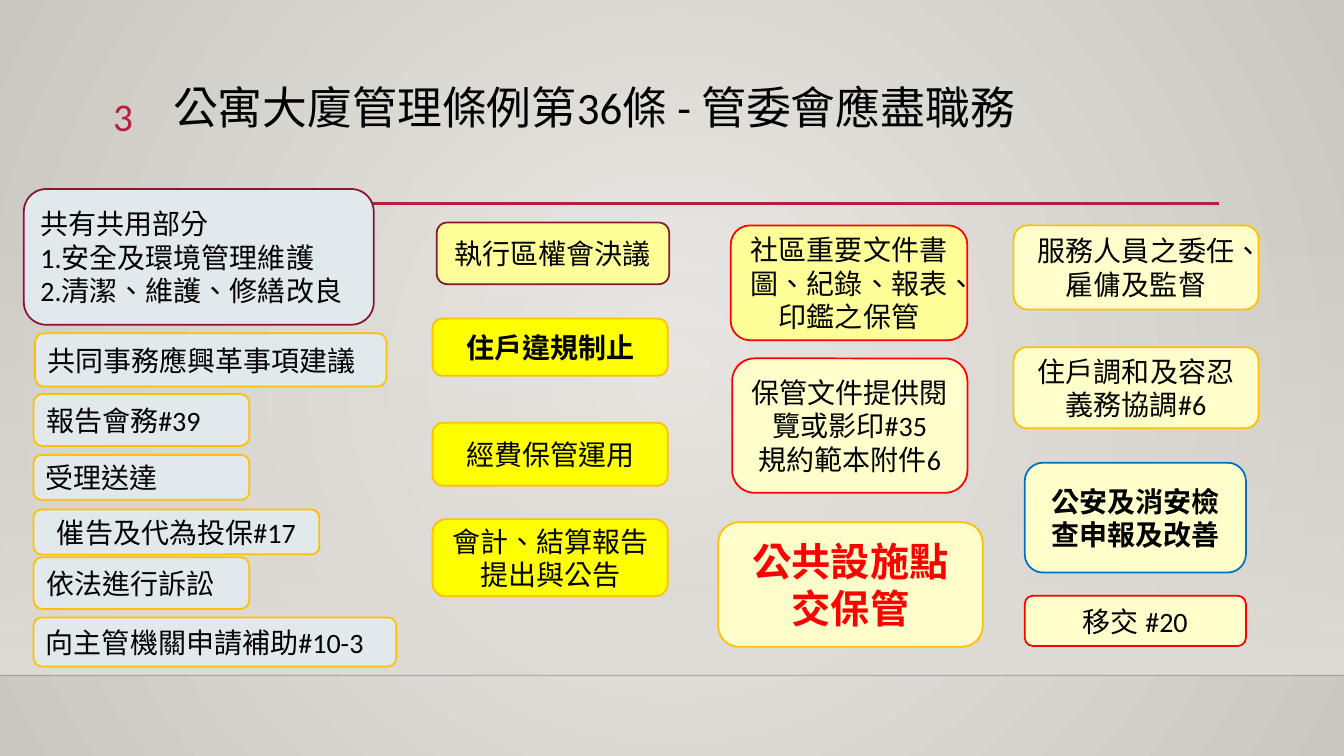
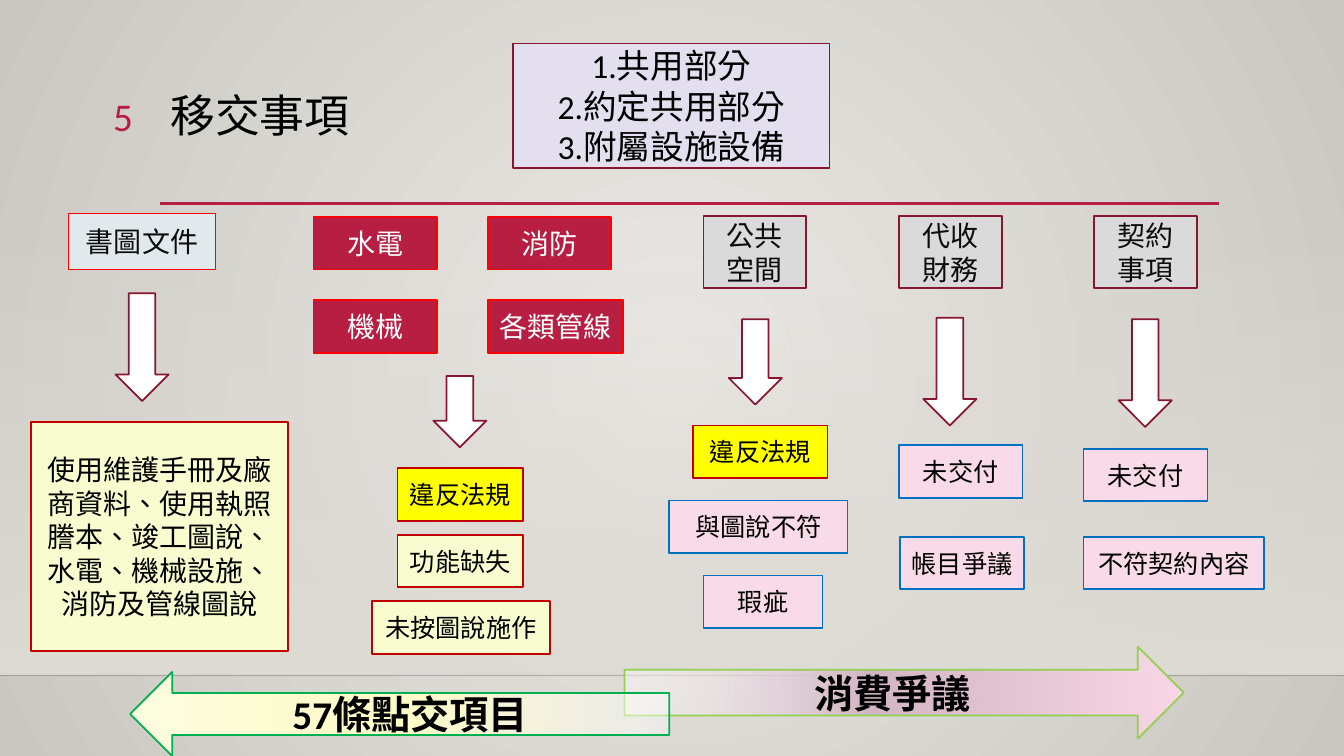
from lxml import etree
from pptx import Presentation
from pptx.dml.color import RGBColor
from pptx.enum import shapes, text
from pptx.oxml import ns
from pptx.util import Pt

FONT = "Calibri"
W, H = 960, 540
COLORS = {
    "black": "000000", "ink": "0D0D0D", "white": "FFFFFF", "crimson": "B71E42",
    "wine": "871631", "red": "FF0000", "brick": "C00000", "blue": "0070C0",
    "gold": "FFC000", "lime": "92D050", "green": "00B050", "yellow": "FFFF00",
    "lemon": "FFFF99", "cream": "FFFFCC", "ivory": "F9FCCE", "mist": "E1E9EC",
    "lilac": "E4DFEF", "gray": "DADADA", "pink": "F8DAE8", "sand": "DFDBD5",
    "glow": "ECEAE7", "edge": "CAC7C1", "rule": "000001", "mauve": "D3B6C4",
    "rose": "FBD8E8", "butter": "FFFDC5", "milk": "FFFEE3",
}
LEFT, CENTER, RIGHT = text.PP_ALIGN.LEFT, text.PP_ALIGN.CENTER, text.PP_ALIGN.RIGHT
ROUND, RECT = shapes.MSO_SHAPE.ROUNDED_RECTANGLE, shapes.MSO_SHAPE.RECTANGLE
DOWN = shapes.MSO_SHAPE.DOWN_ARROW


def rgb(name):
    return RGBColor.from_string(COLORS[name])


def add_xml(parent, tag, **attrs):
    return etree.SubElement(parent, ns.qn(tag), attrs)


class Deck:
    def __init__(self):
        self.prs = Presentation()
        self.prs.slide_width, self.prs.slide_height = Pt(W), Pt(H)
        self.s = None
        master = self.prs.slide_master
        self.gradient(master.background.fill, master.element,
                      [(0, "glow", 100), (100, "edge", 100)])

    def gradient(self, fill, element, stops, angle=None):
        """Stops are (position, colour, opacity) in percent; no angle means radial."""
        fill.gradient()
        grad = element.find(".//" + ns.qn("a:gradFill"))
        for child in list(grad):
            grad.remove(child)
        gs_list = add_xml(grad, "a:gsLst")
        for pos, color, alpha in stops:
            gs = add_xml(gs_list, "a:gs", pos=str(pos * 1000))
            clr = add_xml(gs, "a:srgbClr", val=COLORS[color])
            add_xml(clr, "a:alpha", val=str(alpha * 1000))
        if angle is None:
            circle = add_xml(grad, "a:path", path="circle")
            add_xml(circle, "a:fillToRect", l="50000", t="50000", r="50000", b="50000")
        else:
            add_xml(grad, "a:lin", ang=str(angle * 60000), scaled="0")

    def slide(self, title, number, x, y):
        self.s = self.prs.slides.add_slide(self.prs.slide_layouts[5])
        # Shared backdrop and rules
        self.box(0, 159, W, 323, "", [(0, "sand", 0), (100, "sand", 100)], None,
                 angle=90)
        self.rule(0, W, 482.5, "rule", 1, 20)
        self.rule(114.5, 871, 145.5, "crimson", 2.5)
        # Title and page number
        sp = self.s.shapes.title
        sp.left, sp.top, sp.width, sp.height = Pt(x), Pt(y), Pt(756), Pt(83)
        self.set_text(sp.text_frame, title, 32, anchor=text.MSO_ANCHOR.TOP, spacing=0.9)
        sp = self.s.shapes.add_textbox(Pt(38), Pt(62.5), Pt(64), Pt(40))
        self.set_text(sp.text_frame, number, 28, "crimson", RIGHT,
                      anchor=text.MSO_ANCHOR.TOP)

    def rule(self, x1, x2, y, color, width, alpha=100):
        cn = self.s.shapes.add_connector(shapes.MSO_CONNECTOR.STRAIGHT,
                                         Pt(x1), Pt(y), Pt(x2), Pt(y))
        cn.line.color.rgb = rgb(color)
        cn.line.width = Pt(width)
        clr = cn._element.spPr.find(".//" + ns.qn("a:srgbClr"))
        add_xml(clr, "a:alpha", val=str(alpha * 1000))
        add_xml(cn._element.spPr, "a:effectLst")

    def box(self, x, y, w, h, words, fill, line, size=20, color="black", align=CENTER,
            bold=False, shape=RECT, angle=0):
        sp = self.s.shapes.add_shape(shape, Pt(x), Pt(y), Pt(w), Pt(h))
        sp.shadow.inherit = False
        if isinstance(fill, str):
            sp.fill.solid()
            sp.fill.fore_color.rgb = rgb(fill)
        else:
            self.gradient(sp.fill, sp._element, fill, angle)
        if line:
            sp.line.color.rgb = rgb(line)
            sp.line.width = Pt(1.25)
        else:
            sp.line.fill.background()
        if words:
            self.set_text(sp.text_frame, words, size, color, align, bold)

    def set_text(self, tf, words, size, color="black", align=LEFT, bold=False,
                 anchor=text.MSO_ANCHOR.MIDDLE, spacing=None):
        tf.text = words
        tf.word_wrap = True
        tf.auto_size = text.MSO_AUTO_SIZE.NONE
        tf.vertical_anchor = anchor
        for p in tf.paragraphs:
            p.alignment = align
            p.line_spacing = spacing
            for r in p.runs:
                r.font.size, r.font.bold, r.font.name = Pt(size), bold, FONT
                r.font.color.rgb = rgb(color)
                rPr = r._r.get_or_add_rPr()
                rPr.set("lang", "zh-TW")
                add_xml(rPr, "a:ea", typeface=FONT)


def duties_slide(d):
    d.slide("公寓大廈管理條例第36條 - 管委會應盡職務", "3", 116.5, 57.5)

    # Left column: shared areas and general affairs
    d.box(17, 135, 250, 97, "共有共用部分\n1.安全及環境管理維護\n2.清潔、維護、修繕改良",
          "mist", "wine", align=LEFT, shape=ROUND)
    for x, y, w, h, words, align in [
        (25, 238, 251, 38, "共同事務應興革事項建議", LEFT),
        (24, 281.5, 154, 37, "報告會務#39", LEFT),
        (24, 325, 154, 32, "受理送達", LEFT),
        (24, 364, 204, 32, "催告及代為投保#17", CENTER),
        (24, 398, 154, 37, "依法進行訴訟", LEFT),
        (24, 441, 259, 35, "向主管機關申請補助#10-3", LEFT),
    ]:
        d.box(x, y, w, h, words, "mist", "gold", align=align, shape=ROUND)

    # Second column: resolutions and finances
    d.box(312, 159, 166, 44, "執行區權會決議", "lemon", "wine", shape=ROUND)
    for y, h, words, bold in [
        (227.5, 41, "住戶違規制止", True),
        (302, 45, "經費保管運用", False),
        (371, 55, "會計、結算報告提出與公告", False),
    ]:
        d.box(309, y, 168, h, words, "yellow", "gold", bold=bold, shape=ROUND)

    # Third column: documents and facilities
    d.box(522, 161, 169, 82, "社區重要文件書圖、紀錄、報表、印鑑之保管", "lemon", "red",
          shape=ROUND)
    d.box(523, 256, 168, 96, "保管文件提供閱覽或影印#35\n規約範本附件6", "cream", "red",
          shape=ROUND)
    d.box(513, 373, 189, 89, "公共設施點交保管", "cream", "gold", 28, "red",
          bold=True, shape=ROUND)

    # Right column: staff, residents and safety
    for x, y, w, h, words, line, bold in [
        (724, 161, 175, 60, "服務人員之委任、雇傭及監督", "gold", False),
        (724, 248, 175, 58, "住戶調和及容忍義務協調#6", "gold", False),
        (732, 330.5, 158, 78.5, "公安及消安檢查申報及改善", "blue", True),
        (732, 425.5, 158, 36, "移交 #20", "red", False),
    ]:
        d.box(x, y, w, h, words, "cream", line, bold=bold, shape=ROUND)


def handover_slide(d):
    d.slide("移交事項", "5", 114.5, 63.5)
    d.box(366.5, 31, 226, 89, "1.共用部分\n2.約定共用部分\n3.附屬設施設備",
          "lilac", "wine", 24)

    # Subjects to hand over
    d.box(49, 152.5, 105, 40, "書圖文件", "mist", "red", color="ink")
    for i, (words, w) in enumerate([("水電", 88), ("消防", 88), ("機械", 88),
                                    ("各類管線", 96.5)]):
        row, col = divmod(i, 2)
        d.box(224 + 124.5 * col, 155 + 59.5 * row, w, 37.5, words, "crimson", "red",
              color="white")
    for i, words in enumerate(["公共空間", "代收財務", "契約事項"]):
        d.box(502.5 + 139.5 * i, 154.5, 73.5, 51, words, "gray", "wine", color="ink")

    # Arrows down to the findings
    for x, y, h in [(82.5, 209.5, 77), (309.5, 268.5, 51), (520.5, 228, 61),
                    (659.5, 227, 77), (799, 228, 77)]:
        d.box(x, y, 38, h, "", "white", "wine", shape=DOWN)

    # Findings
    d.box(22, 301.5, 184, 163.5,
          "使用維護手冊及廠商資料、使用執照謄本、竣工圖說、水電、機械設施、消防及管線圖說",
          "ivory", "brick")
    for x, y, w, words, fill, line in [
        (284, 334.5, 89.5, "違反法規", "yellow", "brick"),
        (284, 382, 89.5, "功能缺失", "ivory", "brick"),
        (265.5, 429.5, 127.5, "未按圖說施作", "ivory", "brick"),
        (495, 304, 96, "違反法規", "yellow", "brick"),
        (478, 357.5, 127.5, "與圖說不符", "pink", "blue"),
        (502.5, 411, 85, "瑕疵", "pink", "blue"),
        (642, 318, 88.5, "未交付", "pink", "blue"),
        (643, 383.5, 88.5, "帳目爭議", "pink", "blue"),
        (774, 320.5, 88.5, "未交付", "pink", "blue"),
        (774, 383.5, 129, "不符契約內容", "pink", "blue"),
    ]:
        d.box(x, y, w, 37.5, words, fill, line, 18)

    # Bottom arrows
    d.box(446, 462, 399.5, 65.5, "消費爭議",
          [(0, "white", 42), (44, "mauve", 100), (100, "rose", 100)], "lime", 28,
          bold=True, shape=shapes.MSO_SHAPE.RIGHT_ARROW)
    d.box(93, 480, 385, 60, "57條點交項目",
          [(0, "white", 42), (50, "butter", 100), (100, "milk", 100)], "green", 28,
          bold=True, shape=shapes.MSO_SHAPE.LEFT_ARROW, angle=180)


def main():
    d = Deck()
    duties_slide(d)
    handover_slide(d)
    d.prs.save("out.pptx")


if __name__ == "__main__":
    main()
